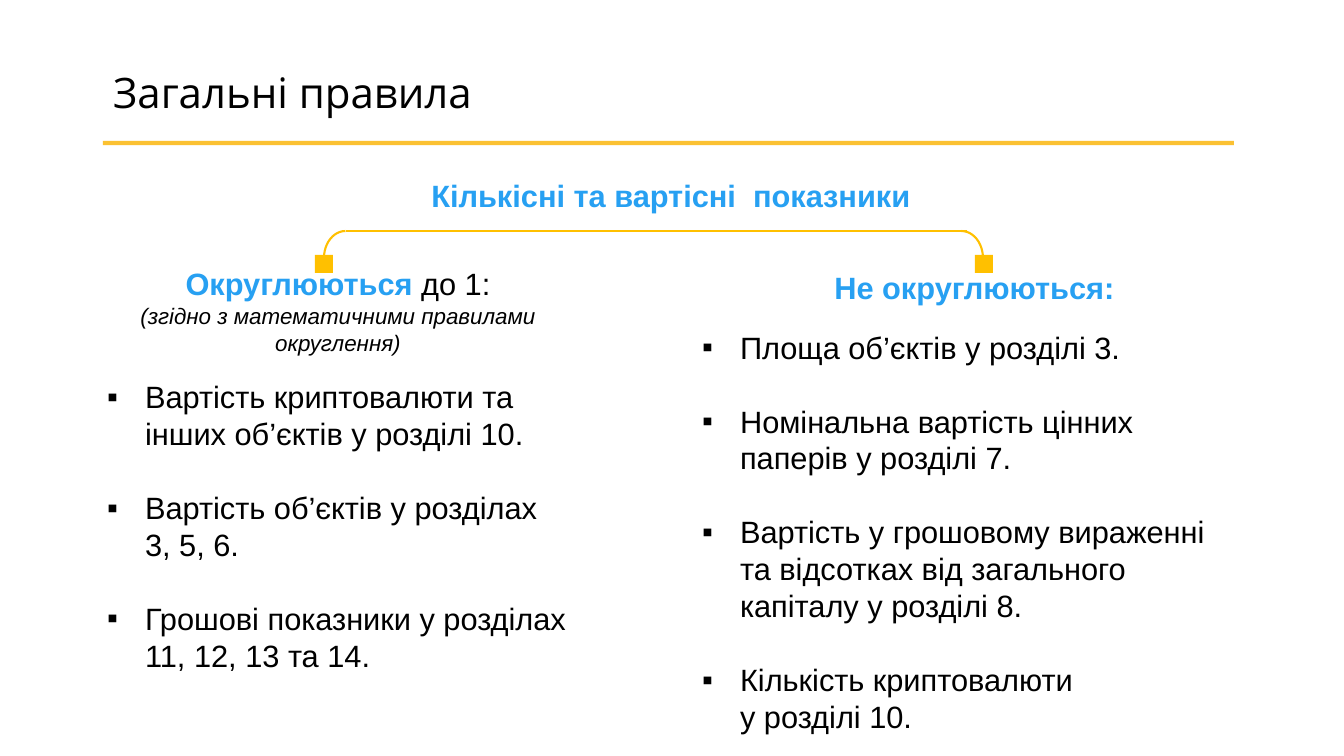
"""Build the slide on general rounding rules."""
from dataclasses import dataclass

import pptx
import pptx.dml.color
import pptx.enum.shapes
import pptx.enum.text
import pptx.oxml
import pptx.oxml.ns
import pptx.shapes.autoshape
import pptx.shapes.connector
import pptx.slide
import pptx.text.text
import pptx.util

PX = 914400 / 100.8
COLORS = {"text": "000000", "accent": "27A0F2", "rule": "FBBB1C", "bracket": "FFC000"}
ALIGN = pptx.enum.text.PP_ALIGN
SHAPE = pptx.enum.shapes.MSO_SHAPE
INDENT = 38
ITEM_GAP = 26.4
HEADING_GAP = 16


@dataclass(frozen=True)
class Box:
    left: int
    top: int
    width: int
    height: int


@dataclass(frozen=True)
class Span:
    text: str
    color: str = "text"
    size: int = 22
    bold: bool = False
    italic: bool = False
    font: str = "Arial"


@dataclass(frozen=True)
class Para:
    spans: tuple[Span, ...]
    align: ALIGN = ALIGN.CENTER
    bullet: bool = False
    before: float = 0


@dataclass(frozen=True)
class Column:
    box: Box
    heading: tuple[Para, ...]
    items: tuple[str, ...]


@dataclass(frozen=True)
class Corner:
    arc_left: int
    square_left: int
    flip: bool


TITLE = Span("Загальні правила", size=30, font="Open Sans")
SUBTITLE = Span("Кількісні та вартісні  показники", "accent", bold=True)
COLUMNS = (
    Column(
        Box(97, 260, 482, 424),
        (
            Para((Span("Округлюються", "accent", bold=True), Span(" до 1:"))),
            Para((Span("(згідно з математичними правилами округлення)", size=16, italic=True),)),
        ),
        (
            "Вартість криптовалюти та інших об’єктів у розділі 10.",
            "Вартість об’єктів у розділах 3, 5, 6.",
            "Грошові показники у розділах 11, 12, 13 та 14.",
        ),
    ),
    Column(
        Box(692, 264, 565, 482),
        (Para((Span("Не округлюються:", "accent", bold=True),)),),
        (
            "Площа об’єктів у розділі 3.",
            "Номінальна вартість цінних паперів у розділі 7.",
            "Вартість у грошовому вираженні \vта відсотках від загального капіталу у розділі 8.",
            "Кількість криптовалюти \vу розділі 10.",
        ),
    ),
)
CORNERS = (Corner(324, 315, True), Corner(940, 975, False))


def px(n: int) -> pptx.util.Emu:
    """Turn px into EMU."""
    return pptx.util.Emu(round(n * PX))


def rgb(name: str) -> pptx.dml.color.RGBColor:
    """Look up a named colour."""
    return pptx.dml.color.RGBColor.from_string(COLORS[name])


def place(sp: pptx.shapes.autoshape.Shape, box: Box) -> None:
    """Move and size a shape."""
    sp.left, sp.top = px(box.left), px(box.top)
    sp.width, sp.height = px(box.width), px(box.height)


def add_bullet(p: pptx.text.text._Paragraph, bullet: bool) -> None:
    """Set the indent and square bullet, or remove both."""
    pPr = p._p.get_or_add_pPr()
    indent = px(INDENT) if bullet else 0
    pPr.set("marL", str(indent))
    pPr.set("indent", str(-indent))
    if bullet:
        pptx.oxml.ns.qn("a:buFont")
        font = pPr.makeelement(pptx.oxml.ns.qn("a:buFont"), {"typeface": "Arial"})
        char = pPr.makeelement(pptx.oxml.ns.qn("a:buChar"), {"char": "▪"})
        pPr.extend([font, char])
    else:
        pPr.append(pPr.makeelement(pptx.oxml.ns.qn("a:buNone"), {}))


def write(sp: pptx.shapes.autoshape.Shape, paras: tuple[Para, ...]) -> None:
    """Fill a shape with formatted paragraphs."""
    tf = sp.text_frame
    tf.word_wrap = True
    tf.auto_size = pptx.enum.text.MSO_AUTO_SIZE.NONE
    tf.vertical_anchor = pptx.enum.text.MSO_ANCHOR.TOP
    tf.text = "\n".join("" for _ in paras)
    for p, para in zip(tf.paragraphs, paras):
        p.alignment = para.align
        p.line_spacing = 1.0
        p.space_before = pptx.util.Pt(para.before)
        p.space_after = pptx.util.Pt(0)
        add_bullet(p, para.bullet)
        if len(para.spans) == 1:
            p.text = para.spans[0].text
            styled = [(r, para.spans[0]) for r in p.runs]
        else:
            styled = [(p.add_run(), span) for span in para.spans]
            for r, span in styled:
                r.text = span.text
        for r, span in styled:
            r.font.name, r.font.size = span.font, pptx.util.Pt(span.size)
            r.font.bold, r.font.italic = span.bold, span.italic
            r.font.color.rgb = rgb(span.color)


def column_paras(column: Column) -> tuple[Para, ...]:
    """Join a column's heading and its spaced bullet list."""
    items = tuple(
        Para((Span(text),), ALIGN.LEFT, True, ITEM_GAP if i else HEADING_GAP)
        for i, text in enumerate(column.items)
    )
    return column.heading + items


def add_line(
    s: pptx.slide.Slide, x1: int, x2: int, y: int, color: str, width: float
) -> pptx.shapes.connector.Connector:
    """Draw a horizontal line without shadow."""
    line = s.shapes.add_connector(pptx.enum.shapes.MSO_CONNECTOR.STRAIGHT, px(x1), px(y), px(x2), px(y))
    line.line.color.rgb = rgb(color)
    line.line.width = pptx.util.Pt(width)
    spPr = line._element.spPr
    spPr.append(spPr.makeelement(pptx.oxml.ns.qn("a:effectLst"), {}))
    return line


def add_corner(s: pptx.slide.Slide, corner: Corner) -> None:
    """Draw one rounded end of the bracket with its square."""
    arc = s.shapes.add_shape(SHAPE.ARC, px(corner.arc_left), px(231), px(43), px(54))
    arc.shadow.inherit = False
    arc.fill.background()
    arc.line.color.rgb = rgb("bracket")
    arc.line.width = pptx.util.Pt(1.5)
    if corner.flip:
        arc._element.spPr.find(pptx.oxml.ns.qn("a:xfrm")).set("flipH", "1")
    square = s.shapes.add_shape(SHAPE.RECTANGLE, px(corner.square_left), px(255), px(18), px(18))
    square.shadow.inherit = False
    square.fill.solid()
    square.fill.fore_color.rgb = rgb("bracket")
    square.line.fill.background()


def main() -> None:
    """Build and save the slide."""
    prs = pptx.Presentation()
    prs.slide_width, prs.slide_height = px(1344), px(756)
    s = prs.slides.add_slide(prs.slide_layouts[3])
    title, *bodies = s.placeholders
    place(title, Box(103, 61, 1058, 61))
    write(title, (Para((TITLE,), ALIGN.LEFT),))
    for body, column in zip(bodies, COLUMNS):
        place(body, column.box)
        write(body, column_paras(column))
    subtitle = s.shapes.add_textbox(px(395), px(172), px(552), px(47))
    write(subtitle, (Para((SUBTITLE,)),))
    rule = add_line(s, 103, 1234, 143, "rule", 3)
    color = rule._element.spPr.find(".//" + pptx.oxml.ns.qn("a:srgbClr"))
    color.append(color.makeelement(pptx.oxml.ns.qn("a:alpha"), {"val": "90000"}))
    add_line(s, 346, 967, 231, "bracket", 1.5)
    for corner in CORNERS:
        add_corner(s, corner)
    prs.save("out.pptx")


if __name__ == "__main__":
    main()
